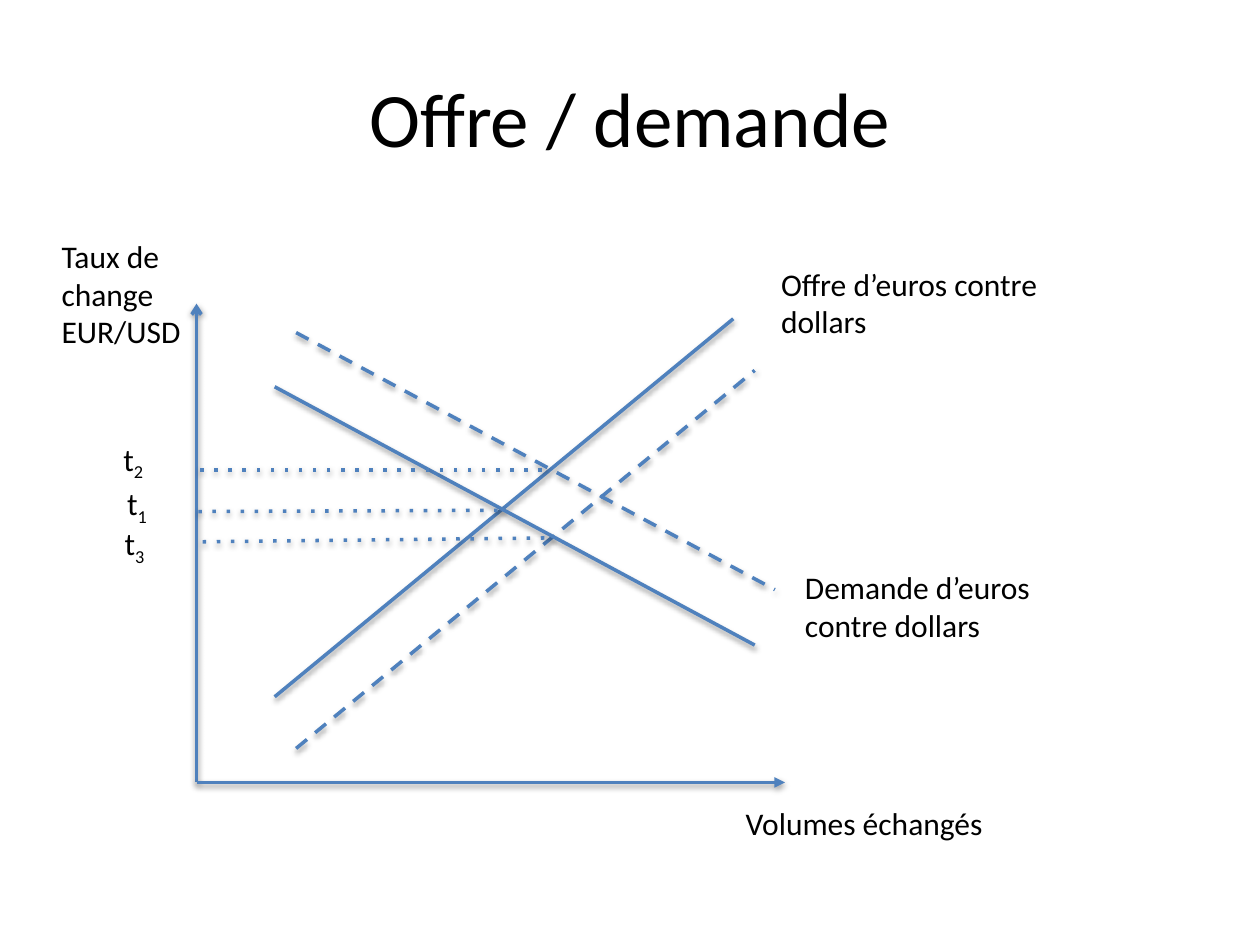
from lxml.etree import SubElement
from pptx import Presentation
from pptx.dml.color import RGBColor
from pptx.enum.shapes import MSO_CONNECTOR
from pptx.enum.text import MSO_ANCHOR, PP_ALIGN
from pptx.oxml.ns import qn
from pptx.util import Inches, Pt

BLUE = "4F81BD"
BLACK = "000000"

deck = Presentation()
deck.slide_width = Inches(10)
deck.slide_height = Inches(7.5)
slide = deck.slides.add_slide(deck.slide_layouts[6])


def add_text(text, left, top, width, height, subscript="", size=18,
             align=PP_ALIGN.LEFT, anchor=MSO_ANCHOR.TOP):
    box = slide.shapes.add_textbox(Inches(left), Inches(top), Inches(width), Inches(height))
    frame = box.text_frame
    frame.word_wrap = True
    frame.vertical_anchor = anchor
    paragraph = frame.paragraphs[0]
    paragraph.alignment = align
    for part in filter(None, (text, subscript)):
        run = paragraph.add_run()
        run.text = part
        run.font.name = "Calibri"
        run.font.size = Pt(size)
        run.font.color.rgb = RGBColor.from_string(BLACK)
    if subscript:
        run.font._element.set("baseline", "-25000")


def add_line(start, end, dash="solid", arrow=None):
    line = slide.shapes.add_connector(
        MSO_CONNECTOR.STRAIGHT, *[Inches(value) for value in (*start, *end)])
    line.line.width = Pt(2)
    line.line.color.rgb = RGBColor.from_string(BLUE)
    stroke = line.line._get_or_add_ln()
    SubElement(stroke, qn("a:prstDash"), val=dash)
    if arrow:
        side, kind = arrow
        SubElement(stroke, qn(side), type=kind)
    effects = SubElement(line._element.spPr, qn("a:effectLst"))
    shadow = SubElement(effects, qn("a:outerShdw"), blurRad="40000", dist="20000",
                        dir="5400000", rotWithShape="0")
    shade = SubElement(shadow, qn("a:srgbClr"), val=BLACK)
    SubElement(shade, qn("a:alpha"), val="38000")


add_text("Offre / demande", 0.5, 0.3, 9, 1.25, size=44,
         align=PP_ALIGN.CENTER, anchor=MSO_ANCHOR.MIDDLE)

origin = (1.56, 6.21)
add_line((1.56, 2.41), origin, arrow=("a:headEnd", "arrow"))
add_line(origin, (6.23, 6.21), arrow=("a:tailEnd", "triangle"))
add_text("Taux de change EUR/USD", 0.39, 1.83, 1.21, 1.01)
add_text("Volumes échangés", 5.82, 6.33, 2.27, 0.4)

curves = [
    ((2.18, 5.53), (5.82, 2.53), "solid"),
    ((2.35, 5.94), (5.99, 2.94), "dash"),
    ((2.18, 3.07), (5.99, 5.12), "solid"),
    ((2.35, 2.64), (6.15, 4.68), "dash"),
]
for start, end, dash in curves:
    add_line(start, end, dash)
add_text("Offre d’euros contre dollars", 6.1, 2.05, 2.38, 0.71)
add_text("Demande d’euros contre dollars", 6.29, 4.46, 2.09, 0.71)

rates = [
    ("1", (3.95, 4.05), (1.56, 4.06), (0.91, 3.79)),
    ("2", (4.3, 3.73), (1.56, 3.73), (0.88, 3.44)),
    ("3", (4.32, 4.27), (1.59, 4.3), (0.89, 4.11)),
]
for index, equilibrium, axis_point, label_corner in rates:
    add_line(equilibrium, axis_point, "dot")
    add_text("t", *label_corner, 0.51, 0.4, subscript=index)

deck.save("out.pptx")
